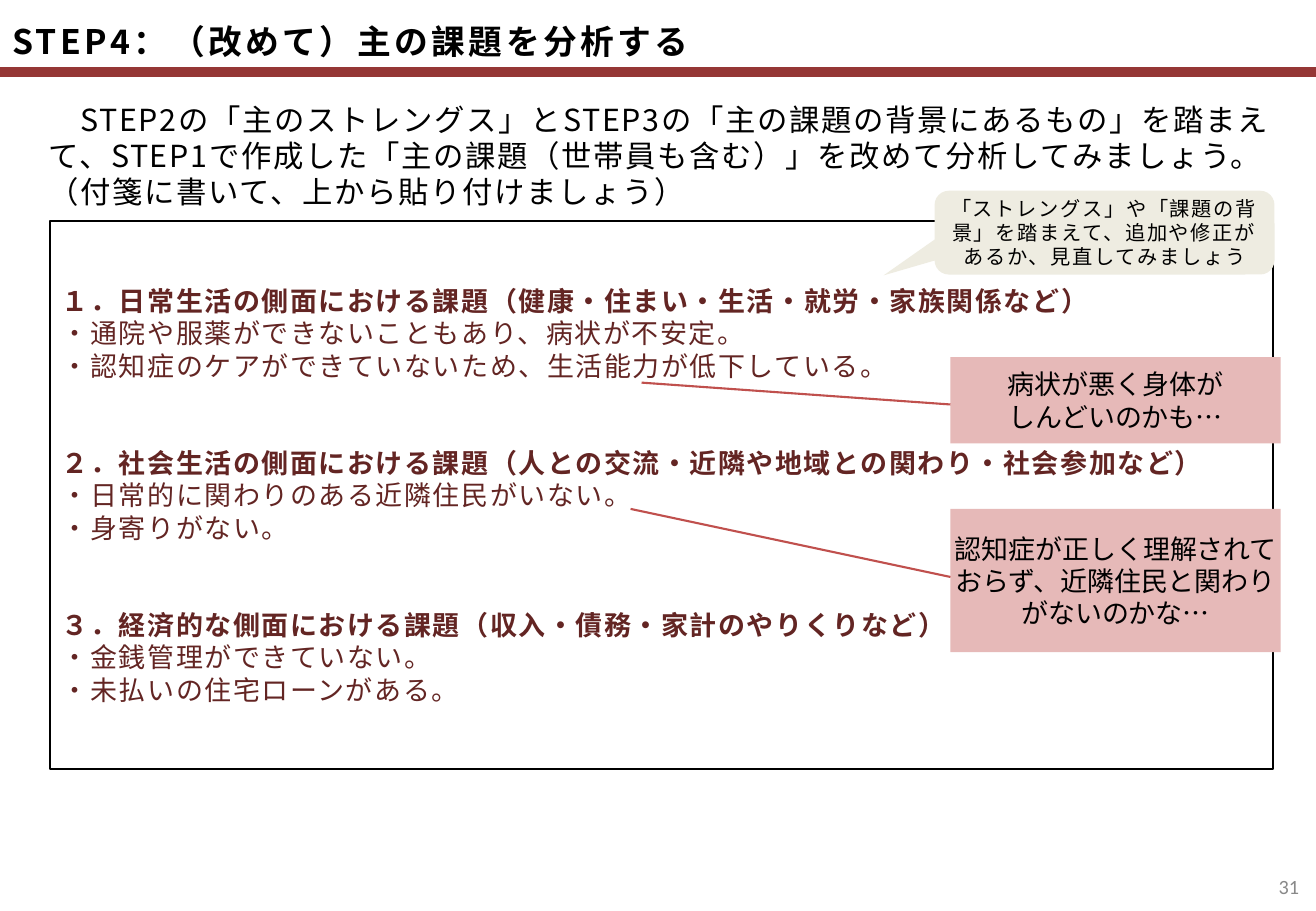
import dataclasses

import pptx
import pptx.dml.color
import pptx.enum.shapes
import pptx.enum.text
import pptx.oxml.ns
import pptx.util
from lxml import etree

ALIGN = pptx.enum.text.PP_ALIGN
ANCHOR = pptx.enum.text.MSO_ANCHOR
SHAPE = pptx.enum.shapes.MSO_SHAPE


@dataclasses.dataclass(frozen=True)
class Theme:
    font: str = "Noto Sans CJK JP"
    number_font: str = "Calibri"
    ink: str = "000000"
    paper: str = "FFFFFF"
    bar: str = "953735"
    issue: str = "632523"
    note: str = "E6B9B8"
    hint: str = "EEECE1"
    link: str = "C0504D"
    grey: str = "898989"
    title_size: int = 20
    lead_size: int = 18
    body_size: int = 16
    small_size: int = 12
    leading: float = 1.2  # line pitch as a multiple of the type size
    inset: tuple = (0.1, 0.05, 0.1, 0.05)  # inches: left, top, right, bottom


class SlideBuilder:
    """Places elements on a grid of 108 columns by 75 rows."""

    columns, rows = 108, 75

    def __init__(self, deck, theme):
        self.theme = theme
        self.column = deck.slide_width / self.columns
        self.row = deck.slide_height / self.rows
        self.page = deck.slides.add_slide(deck.slide_layouts[5])

    def place(self, *cells):
        """Turn alternating columns and rows into lengths."""
        units = (self.column, self.row) * 2
        return [round(cell * unit) for cell, unit in zip(cells, units)]

    def fill_text(self, box, lines, size, color=None, bold_lines=(), align=ALIGN.LEFT,
                  anchor=ANCHOR.MIDDLE, spacing=0, font=None, inset=None, gap=0):
        """Fill a box; a bold line after the first opens a group below a gap."""
        theme, frame = self.theme, box.text_frame
        frame.word_wrap = True
        frame.auto_size = pptx.enum.text.MSO_AUTO_SIZE.NONE
        frame.vertical_anchor = anchor
        (frame.margin_left, frame.margin_top, frame.margin_right,
         frame.margin_bottom) = map(pptx.util.Inches, inset or theme.inset)
        frame.text = "\n".join(lines)
        for index, para in enumerate(frame.paragraphs):
            bold = index in bold_lines
            para.alignment = align
            para.line_spacing = pptx.util.Pt(size * theme.leading)
            para.space_before = pptx.util.Pt(gap if bold and index else 0)
            for span in para.runs:
                span.font.size = pptx.util.Pt(size)
                span.font.bold = bold
                span.font.color.rgb = pptx.dml.color.RGBColor.from_string(color or theme.ink)
                span.font.name = font or theme.font
                # East Asian typeface and letter spacing
                properties = span.font._element
                properties.set("spc", str(spacing * 100))
                latin = properties.find(pptx.oxml.ns.qn("a:latin"))
                asian = etree.Element(pptx.oxml.ns.qn("a:ea"), typeface=font or theme.font)
                latin.addnext(asian)

    def title(self, cells, text, **style):
        box = self.page.shapes.title
        box.left, box.top, box.width, box.height = self.place(*cells)
        self.fill_text(box, [text], self.theme.title_size, bold_lines=(0,), **style)

    def text(self, cells, lines, size, **style):
        self.fill_text(self.page.shapes.add_textbox(*self.place(*cells)), lines, size, **style)

    def panel(self, cells, lines, size, fill, outline=None, kind=SHAPE.RECTANGLE,
              adjust=(), **style):
        box = self.page.shapes.add_shape(kind, *self.place(*cells))
        box.shadow.inherit = False
        box.fill.solid()
        box.fill.fore_color.rgb = pptx.dml.color.RGBColor.from_string(fill)
        if outline:
            box.line.color.rgb = pptx.dml.color.RGBColor.from_string(outline)
            box.line.width = pptx.util.Pt(1)
        else:
            box.line.fill.background()
        for index, value in enumerate(adjust):
            box.adjustments[index] = value
        self.fill_text(box, lines, size, **style)

    def line(self, cells, color, width):
        line = self.page.shapes.add_connector(
            pptx.enum.shapes.MSO_CONNECTOR.STRAIGHT, *self.place(*cells))
        line.line.color.rgb = pptx.dml.color.RGBColor.from_string(color)
        line.line.width = pptx.util.Pt(width)
        etree.SubElement(line._element.spPr, pptx.oxml.ns.qn("a:effectLst"))


ISSUES = [
    ("１．日常生活の側面における課題（健康・住まい・生活・就労・家族関係など）",
     "・通院や服薬ができないこともあり、病状が不安定。",
     "・認知症のケアができていないため、生活能力が低下している。"),
    ("２．社会生活の側面における課題（人との交流・近隣や地域との関わり・社会参加など）",
     "・日常的に関わりのある近隣住民がいない。",
     "・身寄りがない。"),
    ("３．経済的な側面における課題（収入・債務・家計のやりくりなど）",
     "・金銭管理ができていない。",
     "・未払いの住宅ローンがある。"),
]

# Each note: top row, height, lines, insets, link start row, link end column and row
NOTES = [
    (29.4, 7.1, ["病状が悪く身体が", "しんどいのかも…"], None, 33.3, 52.65, 31.5),
    (41.9, 11.8, ["認知症が正しく理解されておらず、近隣住民と関わりがないのかな…"],
     (0, 0, 0, 0), 47.5, 51.75, 41.9),
]
NOTE_LEFT, NOTE_WIDTH = 78, 27.1


def main():
    deck = pptx.Presentation()
    deck.slide_width = pptx.util.Inches(10.83)
    deck.slide_height = pptx.util.Inches(7.5)
    theme = Theme()
    builder = SlideBuilder(deck, theme)

    # Header and page number
    builder.line((0, 5.9, builder.columns, 5.9), theme.bar, 6)
    builder.title((0, 0, 105.1, 5.9), "STEP4：（改めて）主の課題を分析する",
                  spacing=2, inset=(0.1, 0.08, 0.1, 0))
    builder.text((103.4, 71, 4.2, 4), ["31"], theme.small_size, color=theme.grey,
                 align=ALIGN.RIGHT, font=theme.number_font)

    # Instructions
    builder.text((3, 7.8, 102.1, 12.8), [
        "　STEP2の「主のストレングス」とSTEP3の「主の課題の背景にあるもの」を踏まえて、"
        "STEP1で作成した「主の課題（世帯員も含む）」を改めて分析してみましょう。"
        "（付箋に書いて、上から貼り付けましょう）"],
        theme.lead_size, anchor=ANCHOR.TOP, spacing=1)

    # Issues in three groups, two lines apart
    builder.panel((4.1, 18.2, 100.4, 45.1), [line for group in ISSUES for line in group],
                  theme.body_size, theme.paper, outline=theme.ink, color=theme.issue,
                  bold_lines=range(0, 9, 3), spacing=1,
                  gap=2 * theme.body_size * theme.leading)

    # Sticky notes
    for top, height, lines, inset, *_ in NOTES:
        builder.panel((NOTE_LEFT, top, NOTE_WIDTH, height), lines, theme.body_size,
                      theme.note, align=ALIGN.CENTER, inset=inset)

    # Hint callout
    builder.panel((76.7, 15.7, 27.9, 6.9), [
        "「ストレングス」や「課題の背景」を踏まえて、追加や修正があるか、見直してみましょう"],
        theme.small_size, theme.hint, kind=SHAPE.ROUNDED_RECTANGULAR_CALLOUT,
        adjust=(-0.65, 0.51, 0.17), align=ALIGN.CENTER, spacing=1)

    # Links from notes to issues
    for *_, start_row, end_column, end_row in NOTES:
        builder.line((NOTE_LEFT, start_row, end_column, end_row), theme.link, 1.25)

    deck.save("out.pptx")


if __name__ == "__main__":
    main()
